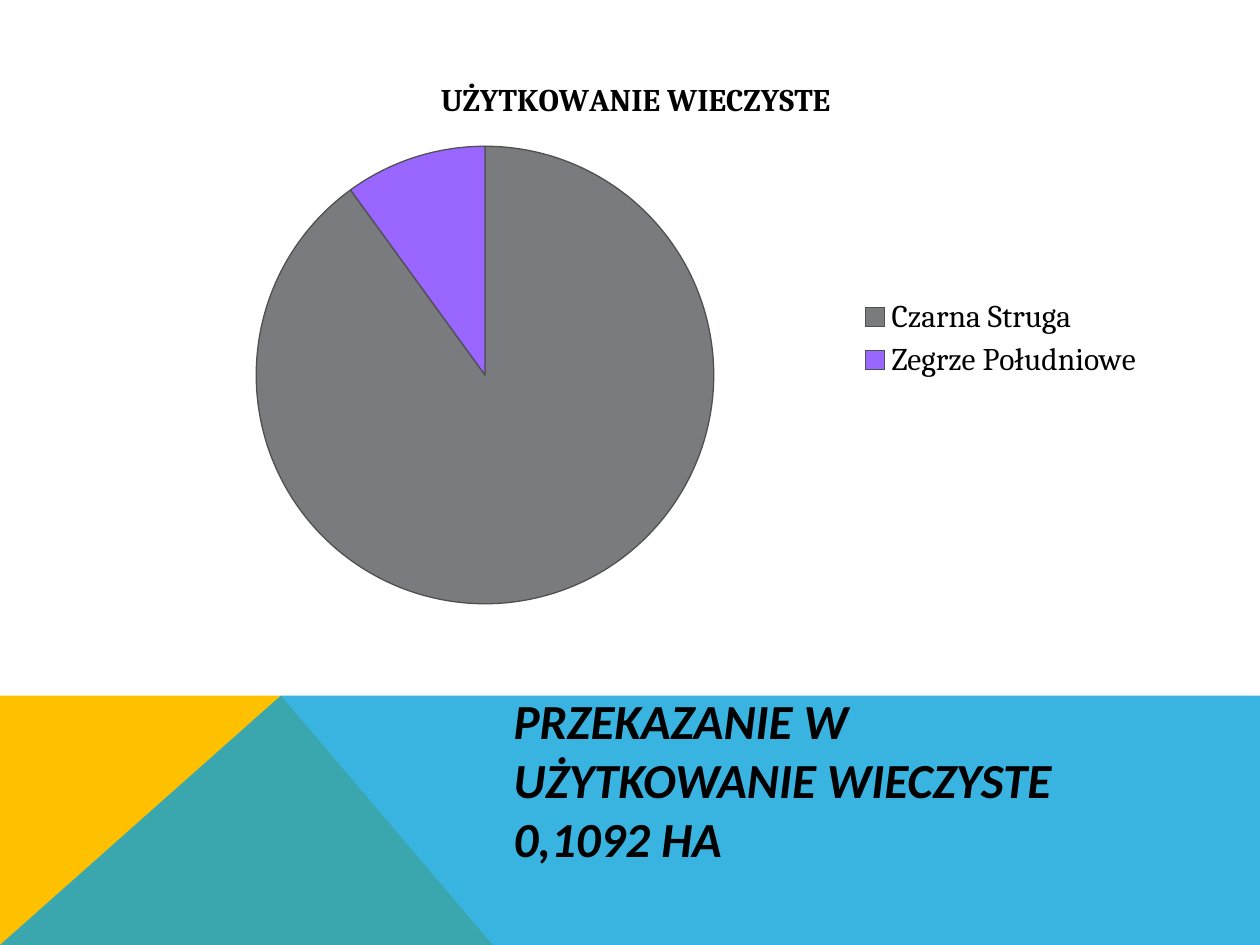
from dataclasses import dataclass

from lxml.etree import SubElement
from pptx import Presentation
from pptx.chart.data import CategoryChartData as ChartData
from pptx.dml.color import RGBColor as Rgb
from pptx.enum.chart import XL_CHART_TYPE as Kind, XL_LEGEND_POSITION as Side
from pptx.enum.text import MSO_ANCHOR as Anchor
from pptx.oxml.ns import qn
from pptx.util import Pt

COLORS = {
    "gold": "FFC000",
    "blue": "08A1D9",
    "gray": "797B7E",
    "violet": "9966FF",
    "edge": "505050",
    "black": "000000",
}
WIDE, HIGH = 720, 540
TOP, PEAK = 397.5, 160.5  # upper edge of the band, x of the point where its colours meet


@dataclass
class Panel:
    points: list[tuple[float, float]]
    color: str
    alpha: int = 100


@dataclass
class Slice:
    name: str
    value: int
    color: str


PANELS = [
    Panel([(0, HIGH), (0, TOP), (PEAK, TOP), (281.5, HIGH)], "gold"),
    Panel([(0, HIGH), (PEAK, TOP), (WIDE, TOP), (WIDE, HIGH)], "blue", 80),
]
SLICES = [
    Slice("Czarna Struga", 90, "gray"),
    Slice("Zegrze Południowe", 10, "violet"),
]
CAPTION = "UŻYTKOWANIE WIECZYSTE"
HEADING = "PRZEKAZANIE W\vUŻYTKOWANIE WIECZYSTE\v0,1092 HA"


def tint(name: str) -> Rgb:
    return Rgb.from_string(COLORS[name])


def style(font, face: str, size: float, bold: bool = False) -> None:
    font.name, font.size, font.bold = face, Pt(size), bold
    font.color.rgb = tint("black")


def draw_panel(slide, panel: Panel) -> None:
    first, *rest = [(Pt(x), Pt(y)) for x, y in panel.points]
    pen = slide.shapes.build_freeform(*first)
    pen.add_line_segments(rest, close=True)
    shape = pen.convert_to_shape()
    shape.shadow.inherit = False
    shape.fill.solid()
    shape.fill.fore_color.rgb = tint(panel.color)
    shape.line.fill.background()
    if panel.alpha < 100:
        color = shape.fill._xPr.find(".//" + qn("a:srgbClr"))
        SubElement(color, qn("a:alpha"), val=str(panel.alpha * 1000))


def draw_chart(slide, slices: list[Slice]) -> None:
    data = ChartData()
    data.categories = [part.name for part in slices]
    data.add_series(CAPTION, [part.value for part in slices])
    box = Pt(65.5), Pt(31.5), Pt(595.5), Pt(323.5)
    chart = slide.shapes.add_chart(Kind.PIE, *box, data).chart
    style(chart.font, "Cambria", 18)

    chart.has_title = True
    frame = chart.chart_title.text_frame
    frame.text = CAPTION
    style(frame.paragraphs[0].runs[0].font, "Cambria", 18, True)

    chart.has_legend = True
    chart.legend.position = Side.RIGHT
    chart.legend.include_in_layout = False
    style(chart.legend.font, "Cambria", 18)

    plot = chart.plots[0]
    plot.vary_by_categories = True
    for i, part in enumerate(slices):
        form = plot.series[0].points[i].format
        form.fill.solid()
        form.fill.fore_color.rgb = tint(part.color)
        form.line.color.rgb = tint("edge")
        form.line.width = Pt(0.75)


def draw_heading(slide) -> None:
    box = slide.shapes.add_textbox(Pt(286.5), Pt(423.5), Pt(385), Pt(43))
    frame = box.text_frame
    frame.word_wrap = True
    frame.vertical_anchor = Anchor.MIDDLE
    frame.text = HEADING
    for run in frame.paragraphs[0].runs:
        style(run.font, "Calibri", 28, True)
        run.font.italic = True


def main() -> None:
    deck = Presentation()
    deck.slide_width, deck.slide_height = Pt(WIDE), Pt(HIGH)
    slide = deck.slides.add_slide(deck.slide_layouts[6])
    for panel in PANELS:
        draw_panel(slide, panel)
    draw_heading(slide)
    draw_chart(slide, SLICES)
    deck.save("out.pptx")


if __name__ == "__main__":
    main()
